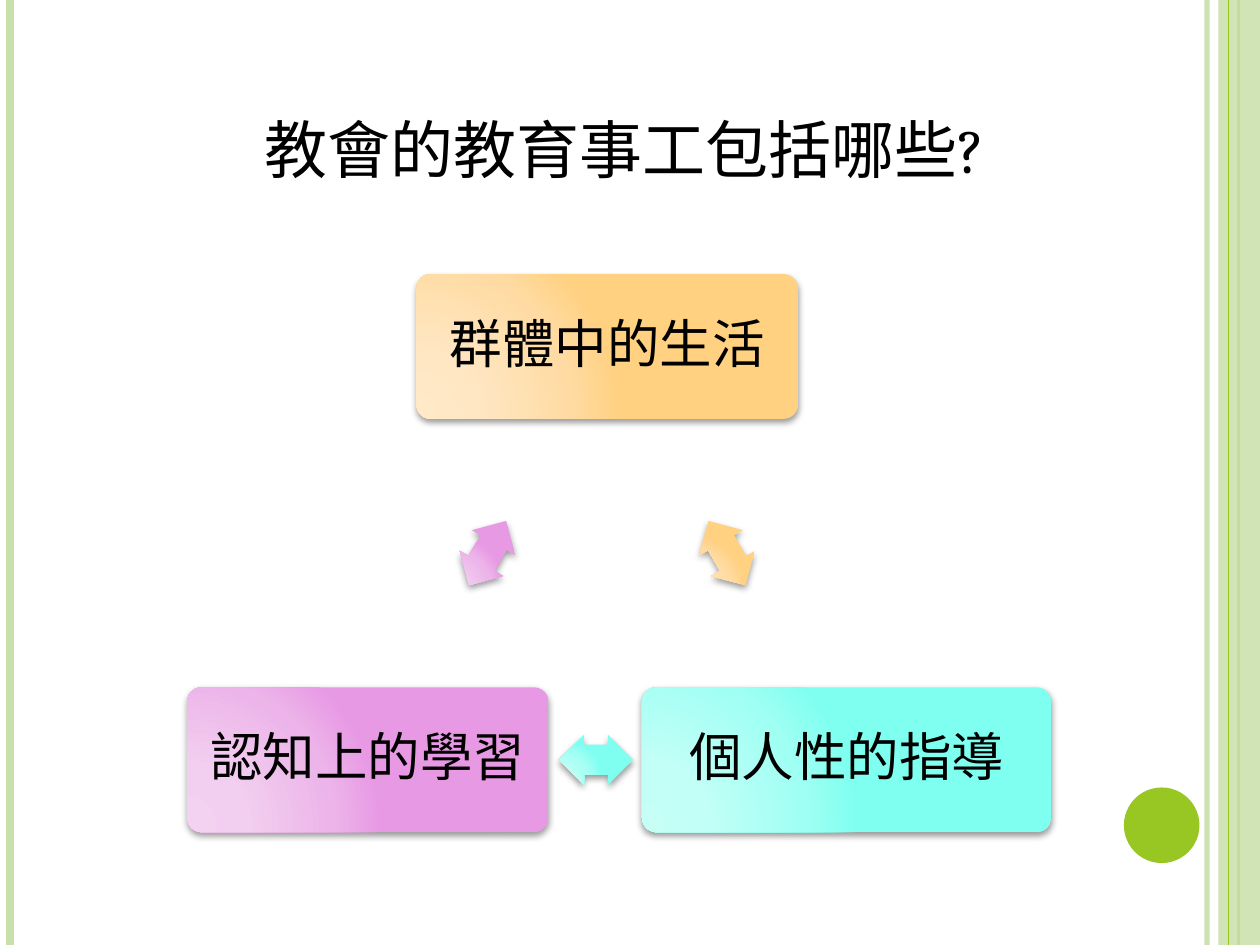
from lxml.etree import SubElement
from pptx import Presentation
from pptx.dml.color import RGBColor
from pptx.enum.shapes import MSO_CONNECTOR, MSO_SHAPE
from pptx.enum.text import MSO_ANCHOR, MSO_AUTO_SIZE, PP_ALIGN
from pptx.oxml import parse_xml
from pptx.oxml.ns import nsdecls, qn
from pptx.util import Inches, Pt

WIDTH, HEIGHT = 10, 7.5
FONT = "Cambria"
GREEN, PALE_GREEN = "98C723", "CAE0AC"
TITLE = "教會的教育事工包括哪些?"

# x, colour, width in points, opacity in percent
BEHIND_BAND = [(9.58, PALE_GREEN, 3, 93), (0.08, PALE_GREEN, 4.5, 100), (9.83, GREEN, 1.5, 100)]
OVER_BAND = [(9.75, GREEN, 0.75, 100)]

STOPS = (0, 30, 75, 100)
ORANGE = ("FFE9C9", "FFE7C3", "FFDBA3", "FFD181")
CYAN = ("C7FFF7", "C1FFF7", "A0FFF3", "7EFFF0")
PINK = ("F3D2F1", "F2CEF0", "ECB4E9", "E899E4")

BOX_H, ARROW_W, ARROW_H = 1.15, 0.59, 0.4
TOP_ROW, ARROW_ROW, BOTTOM_ROW = 2.75, 4.39, 6.03

# text, centre x, centre y, width, colours
BOXES = [
    ("群體中的生活", 4.82, TOP_ROW, 3.03, ORANGE),
    ("個人性的指導", 6.72, BOTTOM_ROW, 3.25, CYAN),
    ("認知上的學習", 2.92, BOTTOM_ROW, 2.87, PINK),
]
# centre x, centre y, rotation, colours
ARROWS = [
    (5.77, ARROW_ROW, 60, ORANGE),
    (4.73, BOTTOM_ROW, 180, CYAN),
    (3.87, ARROW_ROW, 300, PINK),
]


def rgb(value):
    return RGBColor.from_string(value)


def set_opacity(fill_owner, percent):
    if percent < 100:
        color = next(fill_owner.iter(qn("a:srgbClr")))
        SubElement(color, qn("a:alpha"), val=str(percent * 1000))


def add_shape(slide, kind, x, y, w, h):
    sp = slide.shapes.add_shape(kind, Inches(x), Inches(y), Inches(w), Inches(h))
    sp.shadow.inherit = False
    sp.line.fill.background()
    return sp


def add_rule(slide, x, color, width, opacity):
    line = slide.shapes.add_connector(
        MSO_CONNECTOR.STRAIGHT, Inches(x), 0, Inches(x), Inches(HEIGHT))
    line.line.color.rgb = rgb(color)
    line.line.width = Pt(width)
    props = line._element.spPr
    set_opacity(props, opacity)
    SubElement(props, qn("a:effectLst"))


def add_glossy(slide, kind, cx, cy, w, h, colors):
    """Add a shape centred on (cx, cy) with a circular gradient and a soft shadow."""
    sp = add_shape(slide, kind, cx - w / 2, cy - h / 2, w, h)
    sp.fill.background()
    props = sp._element.spPr
    stops = "".join(
        f'<a:gs pos="{pos * 1000}"><a:srgbClr val="{color}"/></a:gs>'
        for pos, color in zip(STOPS, colors))
    props.replace(props.find(qn("a:noFill")), parse_xml(
        f'<a:gradFill {nsdecls("a")} rotWithShape="1"><a:gsLst>{stops}</a:gsLst>'
        '<a:path path="circle"><a:fillToRect l="5000" t="100000" r="120000" b="10000"/>'
        '</a:path></a:gradFill>'))
    shadow = SubElement(
        props.find(qn("a:effectLst")), qn("a:outerShdw"), blurRad=str(Pt(4)),
        dist=str(Pt(2)), dir="5400000", rotWithShape="0")
    color = SubElement(shadow, qn("a:srgbClr"), val="000000")
    SubElement(color, qn("a:alpha"), val="40000")
    return sp


def write(tf, text, size, align):
    tf.text = text
    p = tf.paragraphs[0]
    p.alignment = align
    p.font.size = Pt(size)
    p.font.name = FONT
    p.font.color.rgb = rgb("000000")
    return p


def add_frame(slide):
    for rule in BEHIND_BAND:
        add_rule(slide, *rule)
    band = add_shape(slide, MSO_SHAPE.RECTANGLE, 9.67, 0, WIDTH - 9.67, HEIGHT)
    dot = add_shape(slide, MSO_SHAPE.OVAL, 8.92, 6.25, 0.6, 0.6)
    for sp, color in ((band, PALE_GREEN), (dot, GREEN)):
        sp.fill.solid()
        sp.fill.fore_color.rgb = rgb(color)
    set_opacity(band._element.spPr, 87)
    for rule in OVER_BAND:
        add_rule(slide, *rule)


def add_title(slide):
    title = slide.shapes.title
    title.left, title.top = Inches(2), Inches(0.83)
    title.width, title.height = Inches(5.98), Inches(0.71)
    tf = title.text_frame
    tf.word_wrap = False
    tf.auto_size = MSO_AUTO_SIZE.SHAPE_TO_FIT_TEXT
    tf.vertical_anchor = MSO_ANCHOR.TOP
    write(tf, TITLE, 36, PP_ALIGN.LEFT)


def add_cycle(slide):
    for text, cx, cy, w, colors in BOXES:
        box = add_glossy(slide, MSO_SHAPE.ROUNDED_RECTANGLE, cx, cy, w, BOX_H, colors)
        box.adjustments[0] = 0.1
        tf = box.text_frame
        tf.word_wrap = True
        tf.vertical_anchor = MSO_ANCHOR.MIDDLE
        tf.margin_left = tf.margin_right = tf.margin_top = tf.margin_bottom = Inches(0.12)
        p = write(tf, text, 30, PP_ALIGN.CENTER)
        p.line_spacing = 0.9
        p.space_after = Pt(10.5)
    for cx, cy, rotation, colors in ARROWS:
        arrow = add_glossy(
            slide, MSO_SHAPE.LEFT_RIGHT_ARROW, cx, cy, ARROW_W, ARROW_H, colors)
        arrow.adjustments[0], arrow.adjustments[1] = 0.6, 0.5
        arrow.rotation = rotation


def main():
    prs = Presentation()
    prs.slide_width, prs.slide_height = Inches(WIDTH), Inches(HEIGHT)
    slide = prs.slides.add_slide(prs.slide_layouts[5])
    add_frame(slide)
    add_title(slide)
    add_cycle(slide)
    prs.save("out.pptx")


if __name__ == "__main__":
    main()
